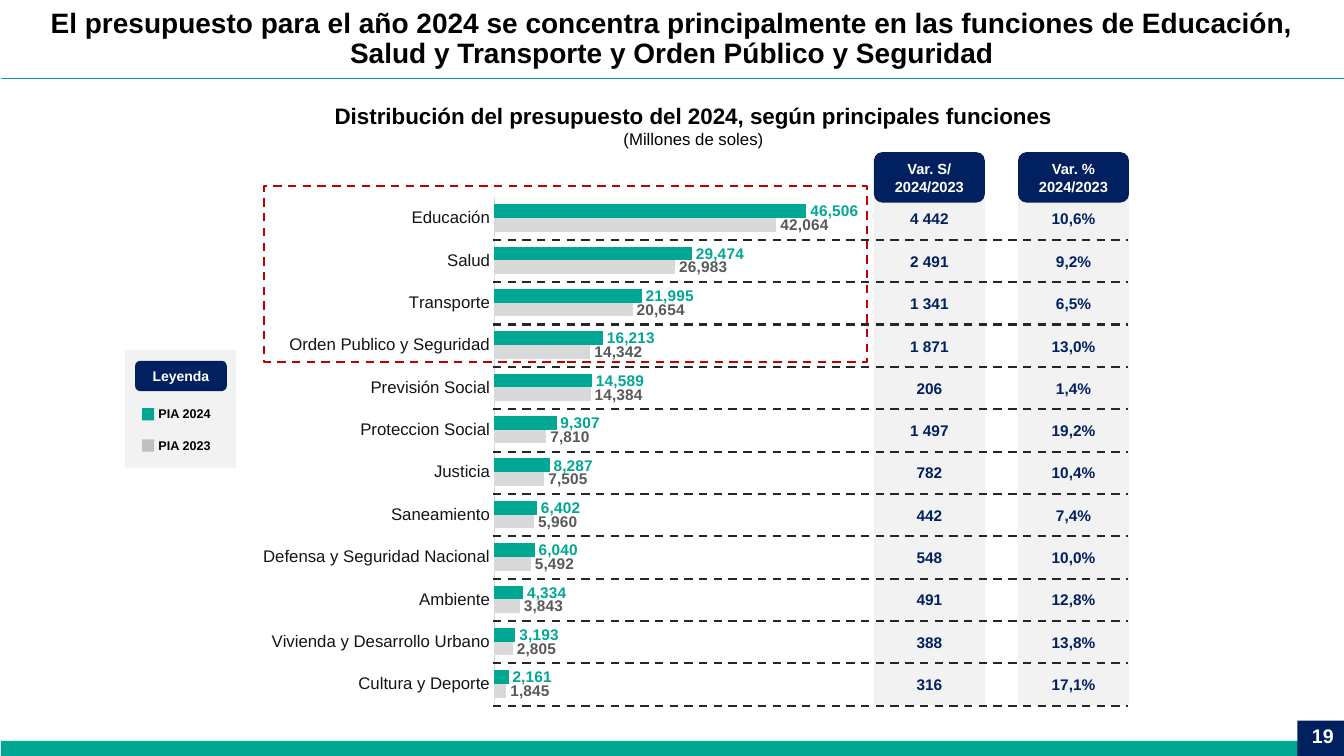
"""Build the slide on the 2024 budget by main government functions."""
from dataclasses import dataclass

from pptx import Presentation
from pptx.chart.data import CategoryChartData
from pptx.chart.chart import Chart
from pptx.dml.color import RGBColor
from pptx.enum.chart import XL_CHART_TYPE, XL_LABEL_POSITION, XL_TICK_MARK
from pptx.enum.dml import MSO_LINE
from pptx.enum.shapes import MSO_CONNECTOR, MSO_SHAPE
from pptx.enum.text import MSO_ANCHOR, PP_ALIGN
from pptx.oxml import parse_xml
from pptx.oxml.ns import nsdecls, qn
from pptx.shapes.autoshape import Shape
from pptx.slide import Slide
from pptx.text.text import Font, TextFrame
from pptx.util import Inches, Pt

RECT, ROUNDED = MSO_SHAPE.RECTANGLE, MSO_SHAPE.ROUNDED_RECTANGLE
STRAIGHT, DASH = MSO_CONNECTOR.STRAIGHT, MSO_LINE.DASH
CENTER, RIGHT, MIDDLE = PP_ALIGN.CENTER, PP_ALIGN.RIGHT, MSO_ANCHOR.MIDDLE
CLUSTERED, OUTSIDE_END = XL_CHART_TYPE.BAR_CLUSTERED, XL_LABEL_POSITION.OUTSIDE_END
NO_TICK = XL_TICK_MARK.NONE

TEAL = RGBColor(0x00, 0xA7, 0x92)
BAR_TEAL = RGBColor(0x00, 0xA7, 0x93)
NAVY = RGBColor(0x00, 0x20, 0x60)
PALE = RGBColor(0xF2, 0xF2, 0xF2)
SILVER = RGBColor(0xD9, 0xD9, 0xD9)
GRAY = RGBColor(0xBF, 0xBF, 0xBF)
DARK_GRAY = RGBColor(0x59, 0x59, 0x59)
CHARCOAL = RGBColor(0x26, 0x26, 0x26)
INK = RGBColor(0x11, 0x15, 0x1A)
RED = RGBColor(0xC0, 0x00, 0x00)
BLACK = RGBColor(0x00, 0x00, 0x00)
WHITE = RGBColor(0xFF, 0xFF, 0xFF)

FONT = "Arial"
MILLION = 1_000_000
MILLIONS_FORMAT = "#,##0,,"
GRID_STEP = 0.1
GRID_COLUMNS, GRID_ROWS = 133.33, 75
FIRST_VALUE_ROW, FIRST_RULE_ROW, ROW_PITCH = 20.3, 23.8, 4.2
PLOT_AREA = {"x": 0.422, "y": 0.032, "w": 0.511, "h": 0.936}


@dataclass(frozen=True)
class Cell:
    column: float
    row: float
    columns: float
    rows: float

    def place(self) -> tuple[int, int, int, int]:
        return grid(self.column), grid(self.row), grid(self.columns), grid(self.rows)


@dataclass(frozen=True)
class BudgetFunction:
    name: str
    pia_2024: int
    pia_2023: int
    change_soles: str
    change_percent: str


@dataclass(frozen=True)
class ChangeColumn:
    heading: str
    column: float
    field: str


@dataclass(frozen=True)
class LegendEntry:
    label: str
    row: float
    color: RGBColor


@dataclass(frozen=True)
class YearSeries:
    name: str
    field: str
    bar_color: RGBColor
    label_color: RGBColor


FUNCTIONS = [
    BudgetFunction("Educación", 46506, 42064, "4 442", "10,6%"),
    BudgetFunction("Salud", 29474, 26983, "2 491", "9,2%"),
    BudgetFunction("Transporte", 21995, 20654, "1 341", "6,5%"),
    BudgetFunction("Orden Publico y Seguridad", 16213, 14342, "1 871", "13,0%"),
    BudgetFunction("Previsión Social", 14589, 14384, "206", "1,4%"),
    BudgetFunction("Proteccion Social", 9307, 7810, "1 497", "19,2%"),
    BudgetFunction("Justicia", 8287, 7505, "782", "10,4%"),
    BudgetFunction("Saneamiento", 6402, 5960, "442", "7,4%"),
    BudgetFunction("Defensa y Seguridad Nacional", 6040, 5492, "548", "10,0%"),
    BudgetFunction("Ambiente", 4334, 3843, "491", "12,8%"),
    BudgetFunction("Vivienda y Desarrollo Urbano", 3193, 2805, "388", "13,8%"),
    BudgetFunction("Cultura y Deporte", 2161, 1845, "316", "17,1%"),
]
CHANGE_COLUMNS = [
    ChangeColumn("Var. S/\n2024/2023", 86.7, "change_soles"),
    ChangeColumn("Var. %\n2024/2023", 101, "change_percent"),
]
LEGEND = [LegendEntry("PIA 2024", 39.8, TEAL), LegendEntry("PIA 2023", 42.9, GRAY)]
SERIES = [
    YearSeries("PIA 2023", "pia_2023", SILVER, DARK_GRAY),
    YearSeries("PIA 2024", "pia_2024", BAR_TEAL, BAR_TEAL),
]


def grid(steps: float) -> int:
    return Inches(steps * GRID_STEP)


def style_font(font: Font, size: float, color: RGBColor, bold: bool) -> None:
    font.name, font.size, font.bold = FONT, Pt(size), bold
    font.color.rgb = color


def write(frame: TextFrame, text: str, size: float, color: RGBColor,
          align: PP_ALIGN = CENTER) -> None:
    frame.word_wrap = True
    frame.text = text
    for paragraph in frame.paragraphs:
        paragraph.alignment = align
        for run in paragraph.runs:
            style_font(run.font, size, color, True)


def add_text(slide: Slide, cell: Cell, text: str, size: float, color: RGBColor,
             align: PP_ALIGN = CENTER) -> TextFrame:
    frame = slide.shapes.add_textbox(*cell.place()).text_frame
    write(frame, text, size, color, align)
    return frame


def add_panel(slide: Slide, cell: Cell, fill: RGBColor, preset: MSO_SHAPE = RECT) -> Shape:
    panel = slide.shapes.add_shape(preset, *cell.place())
    panel.shadow.inherit = False
    panel.fill.solid()
    panel.fill.fore_color.rgb = fill
    panel.line.fill.background()
    return panel


def add_badge(slide: Slide, cell: Cell, text: str, size: float) -> None:
    frame = add_panel(slide, cell, NAVY, ROUNDED).text_frame
    frame.vertical_anchor = MIDDLE
    write(frame, text, size, WHITE)


def add_rule(slide: Slide, start: float, end: float, row: float, color: RGBColor,
             width: float, dash: MSO_LINE | None = None) -> None:
    rule = slide.shapes.add_connector(STRAIGHT, grid(start), grid(row), grid(end), grid(row))
    rule.line.color.rgb, rule.line.width = color, Pt(width)
    rule.line.dash_style = dash
    rule._element.spPr.append(parse_xml(f"<a:effectLst {nsdecls('a')}/>"))


def fix_plot_area(chart: Chart) -> None:
    plot_area = chart._chartSpace.find(f".//{qn('c:plotArea')}")
    for automatic in plot_area.findall(qn("c:layout")):
        plot_area.remove(automatic)
    modes = "".join(f'<c:{axis}Mode val="edge"/>' for axis in "xy")
    shares = "".join(f'<c:{side} val="{share}"/>' for side, share in PLOT_AREA.items())
    plot_area.insert(0, parse_xml(
        f'<c:layout {nsdecls("c")}><c:manualLayout><c:layoutTarget val="inner"/>'
        f"{modes}{shares}</c:manualLayout></c:layout>"))


def add_budget_chart(slide: Slide) -> None:
    ascending = FUNCTIONS[::-1]
    data = CategoryChartData(number_format=MILLIONS_FORMAT)
    data.categories = [function.name for function in ascending]
    for year in SERIES:
        data.add_series(year.name, [getattr(f, year.field) * MILLION for f in ascending])
    chart = slide.shapes.add_chart(CLUSTERED, *Cell(21.5, 17.8, 65.2, 53.9).place(), data).chart
    chart.has_legend = chart.has_title = False
    style_font(chart.font, 14, BLACK, False)
    names, amounts = chart.category_axis, chart.value_axis
    names.major_tick_mark = NO_TICK
    names.format.line.color.rgb, names.format.line.width = SILVER, Pt(0.75)
    style_font(names.tick_labels.font, 12, INK, False)
    amounts.visible = amounts.has_major_gridlines = False
    amounts.minimum_scale, amounts.maximum_scale = 0, 50_000 * MILLION
    plot = chart.plots[0]
    plot.gap_width, plot.overlap, plot.vary_by_categories = 110, 0, False
    for bars, year in zip(plot.series, SERIES):
        bars.format.fill.solid()
        bars.format.fill.fore_color.rgb = year.bar_color
        labels = bars.data_labels
        labels.show_value, labels.position = True, OUTSIDE_END
        labels.number_format, labels.number_format_is_linked = MILLIONS_FORMAT, False
        style_font(labels.font, 11, year.label_color, True)
    fix_plot_area(chart)


def add_frame(slide: Slide) -> None:
    add_rule(slide, 0.1, GRID_COLUMNS, 7.8, TEAL, 0.75)
    add_panel(slide, Cell(0.1, 73.5, 133.2, 1.5), TEAL)
    add_panel(slide, Cell(128.7, 71.5, 4.7, 3.5), NAVY)
    add_text(slide, Cell(103.3, 71.3, 30, 4), "19", 14, WHITE, RIGHT)
    title = add_text(slide, Cell(0, 0.4, GRID_COLUMNS, 7.1),
                     "El presupuesto para el año 2024 se concentra principalmente en las "
                     "funciones de Educación, Salud y Transporte y Orden Público y Seguridad",
                     20, BLACK)
    title.paragraphs[0].line_spacing = 0.9
    subtitle = add_text(slide, Cell(27.6, 9.6, 82.4, 5.7),
                        "Distribución del presupuesto del 2024, según principales funciones\n"
                        "(Millones de soles)", 16, BLACK)
    style_font(subtitle.paragraphs[1].runs[0].font, 12, BLACK, False)


def add_legend(slide: Slide) -> None:
    add_panel(slide, Cell(12.4, 34.7, 11, 11.7), PALE)
    add_badge(slide, Cell(13.4, 35.8, 9.1, 3), "Leyenda", 10)
    for entry in LEGEND:
        add_panel(slide, Cell(14.1, entry.row + 0.7, 1.2, 1.2), entry.color)
        add_text(slide, Cell(13.4, entry.row, 9.8, 2.5), entry.label, 9, BLACK)


def add_changes(slide: Slide) -> None:
    for change in CHANGE_COLUMNS:
        add_panel(slide, Cell(change.column, 17.8, 11, 52.2), PALE)
        add_badge(slide, Cell(change.column, 15.1, 11, 5), change.heading, 10.5)
        for index, function in enumerate(FUNCTIONS):
            cell = Cell(change.column + 1.9, FIRST_VALUE_ROW + index * ROW_PITCH, 7.2, 2.9)
            add_text(slide, cell, getattr(function, change.field), 11, NAVY)


def add_highlight(slide: Slide) -> None:
    highlight = add_panel(slide, Cell(26.2, 18.5, 59.8, 17.4), WHITE)
    highlight.fill.background()
    highlight.line.color.rgb, highlight.line.width = RED, Pt(1.5)
    highlight.line.dash_style = DASH


def main() -> None:
    deck = Presentation()
    deck.slide_width, deck.slide_height = grid(GRID_COLUMNS), grid(GRID_ROWS)
    slide = deck.slides.add_slide(deck.slide_layouts[6])
    add_frame(slide)
    add_legend(slide)
    add_changes(slide)
    add_highlight(slide)
    add_budget_chart(slide)
    for index in range(len(FUNCTIONS)):
        add_rule(slide, 48.9, 111.9, FIRST_RULE_ROW + index * ROW_PITCH, CHARCOAL, 1.5, DASH)
    deck.save("out.pptx")


if __name__ == "__main__":
    main()
